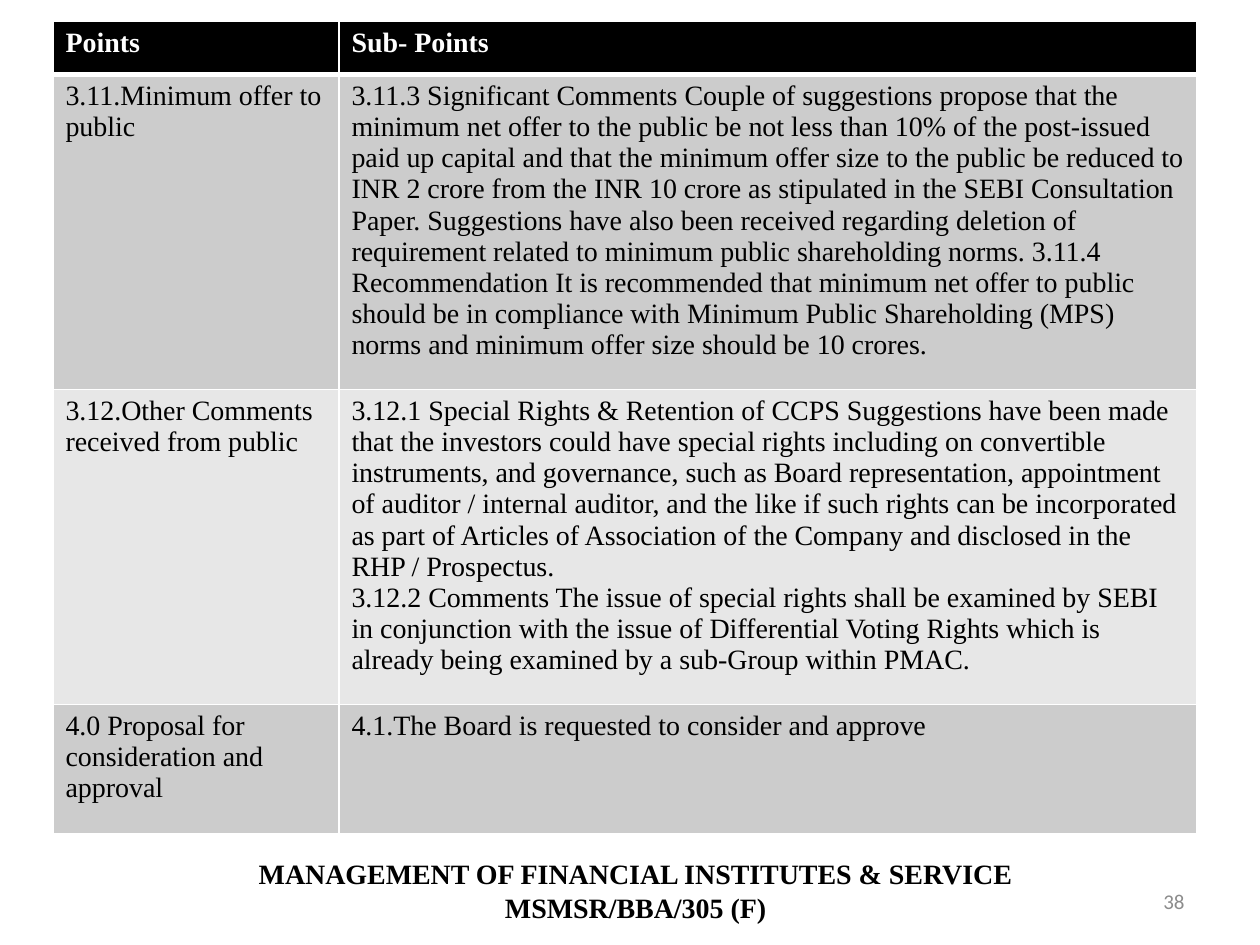
import pptx
import pptx.dml.color
import pptx.enum.text
import pptx.oxml
import pptx.oxml.ns
import pptx.util

COLORS = {"white": "FFFFFF", "black": "000000", "odd": "CCCCCC",
          "even": "E7E7E7", "muted": "8C8C8C"}
COLUMNS, ROWS = 100, 75
ALIGN = pptx.enum.text.PP_ALIGN
ANCHOR = pptx.enum.text.MSO_ANCHOR

POINTS = [
    ("Points", ["Sub- Points"], 4.2),
    ("3.11.Minimum offer to public", [
        "3.11.3 Significant Comments Couple of suggestions propose that the minimum net offer "
        "to the public be not less than 10% of the post-issued paid up capital and that the "
        "minimum offer size to the public be reduced to INR 2 crore from the INR 10 crore as "
        "stipulated in the SEBI Consultation Paper. Suggestions have also been received "
        "regarding deletion of requirement related to minimum public shareholding norms. "
        "3.11.4 Recommendation It is recommended that minimum net offer to public should be in "
        "compliance with Minimum Public Shareholding (MPS) norms and minimum offer size should "
        "be 10 crores."], 25),
    ("3.12.Other Comments received from public", [
        "3.12.1 Special Rights & Retention of CCPS Suggestions have been made that the "
        "investors could have special rights including on convertible instruments, and "
        "governance, such as Board representation, appointment of auditor / internal auditor, "
        "and the like if such rights can be incorporated as part of Articles of Association of "
        "the Company and disclosed in the RHP / Prospectus.",
        "3.12.2 Comments The issue of special rights shall be examined by SEBI in conjunction "
        "with the issue of Differential Voting Rights which is already being examined by a "
        "sub-Group within PMAC."], 25),
    ("4.0 Proposal for consideration and approval",
     ["4.1.The Board is requested to consider and approve"], 10.3),
]


class SlideBuilder:
    """Holds the style and current slide, placing elements on a 100 by 75 grid."""

    font, size = "Times New Roman", 16

    def __init__(self, deck):
        self.deck = deck
        self.slide = deck.slides.add_slide(deck.slide_layouts[6])

    def across(self, columns):
        return round(self.deck.slide_width * columns / COLUMNS)

    def down(self, rows):
        return round(self.deck.slide_height * rows / ROWS)

    def box(self, left, top, width, height):
        return self.across(left), self.down(top), self.across(width), self.down(height)

    def add_text(self, paragraph, text, color, bold=False, font=None, size=None):
        for number, line in enumerate(text.split("\n")):
            if number:
                paragraph.add_line_break()
            run = paragraph.add_run()
            run.text = line
            run.font.name = font or self.font
            run.font.size = pptx.util.Pt(size or self.size)
            run.font.bold = bold
            run.font.color.rgb = pptx.dml.color.RGBColor.from_string(COLORS[color])

    def label(self, place, text, color, align, anchor=ANCHOR.TOP, **style):
        frame = self.slide.shapes.add_textbox(*self.box(*place)).text_frame
        frame.word_wrap = True
        frame.vertical_anchor = anchor
        frame.paragraphs[0].alignment = align
        self.add_text(frame.paragraphs[0], text, color, **style)

    def border(self, cell, top, bottom):
        properties = cell._tc.get_or_add_tcPr()
        for side, points in (("L", 1), ("R", 1), ("T", top), ("B", bottom)):
            properties.append(pptx.oxml.parse_xml(
                f'<a:ln{side} {pptx.oxml.ns.nsdecls("a")} w="{pptx.util.Pt(points)}">'
                f'<a:solidFill><a:srgbClr val="{COLORS["white"]}"/></a:solidFill></a:ln{side}>'))

    def cell(self, cell, paragraphs, fill, color, bold):
        cell.fill.solid()
        cell.fill.fore_color.rgb = pptx.dml.color.RGBColor.from_string(COLORS[fill])
        frame = cell.text_frame
        for number, text in enumerate(paragraphs):
            paragraph = frame.add_paragraph() if number else frame.paragraphs[0]
            self.add_text(paragraph, text, color, bold)

    def table(self, left, top, widths, entries):
        height = sum(entry[2] for entry in entries)
        place = self.box(left, top, sum(widths), height)
        grid = self.slide.shapes.add_table(len(entries), len(widths), *place).table
        for column, width in zip(grid.columns, widths):
            column.width = self.across(width)
        for index, (point, details, rows) in enumerate(entries):
            grid.rows[index].height = self.down(rows)
            header = index == 0
            fill = "black" if header else ("odd" if index % 2 else "even")
            color = "white" if header else "black"
            for column, paragraphs in enumerate(([point], details)):
                cell = grid.cell(index, column)
                self.border(cell, 3 if index == 1 else 1, 3 if header else 1)
                self.cell(cell, paragraphs, fill, color, header)


def main():
    deck = pptx.Presentation()
    deck.slide_width = pptx.util.Inches(10)
    deck.slide_height = pptx.util.Inches(7.5)
    page = SlideBuilder(deck)
    page.table(4.2, 1.7, (22.7, 68.1), POINTS)
    page.label((8.4, 67.5, 84.1, 6.4),
               "MANAGEMENT OF FINANCIAL INSTITUTES & SERVICE\nMSMSR/BBA/305 (F)",
               "black", ALIGN.CENTER, bold=True)
    page.label((71.7, 69.5, 23.3, 4), "38", "muted", ALIGN.RIGHT, ANCHOR.MIDDLE,
               font="Calibri", size=12)
    deck.save("out.pptx")


if __name__ == "__main__":
    main()
